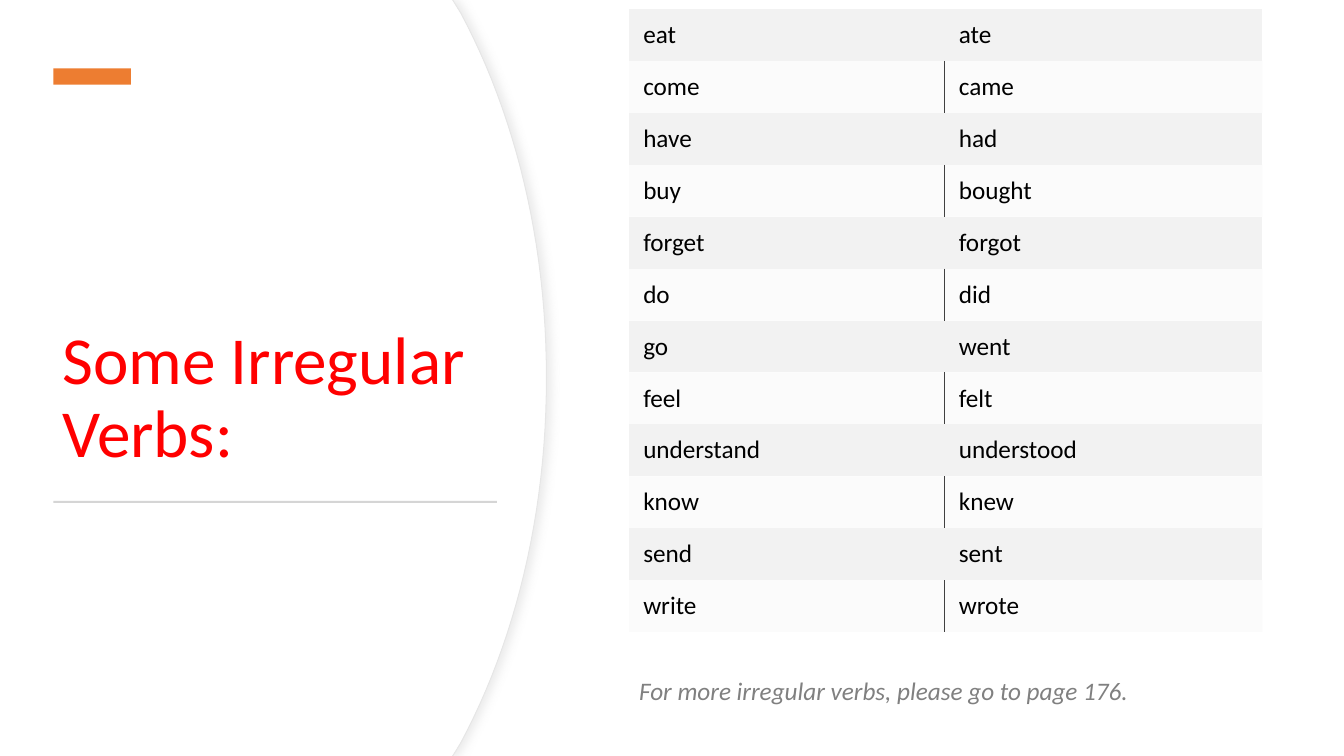
from pptx import Presentation as Deck
from pptx.dml.color import RGBColor as Rgb
from pptx.enum.shapes import MSO_SHAPE as Kind
from pptx.enum.text import MSO_ANCHOR as Anchor
from pptx.oxml import parse_xml as to_xml
from pptx.oxml.ns import nsdecls, qn
from pptx.util import Inches, Pt


def paint(fmt, color):
    fmt.solid()
    fmt.fore_color.rgb = Rgb.from_string(color)


def write(frame, text, color, look):
    para = frame.paragraphs[0]
    run = para.add_run()
    run.text = text
    run.font.name = "Calibri"
    paint(run.font.fill, color)
    for key, val in look.items():
        setattr(run.font, key, val)
    return para


deck = Deck()
deck.slide_width = Inches(13.33)
deck.slide_height = Inches(7.5)
slide = deck.slides.add_slide(deck.slide_layouts[6])
shapes = slide.shapes

steps = 24
for edge in (5.42, 5.41):
    curve = [(edge - 0.85, 0.13), (edge - 0.31, 1.14), (edge, 2.39), (edge, 3.75)]
    upper = []
    for step in range(steps + 1):
        t = step / steps
        mix = ((1 - t) ** 3, 3 * t * (1 - t) ** 2, 3 * t ** 2 * (1 - t), t ** 3)
        upper.append([sum(m * p[axis] for m, p in zip(mix, curve)) for axis in (0, 1)])
    upper.insert(0, [edge - 0.93, 0])
    lower = [[x, 7.5 - y] for x, y in reversed(upper[:-1])]
    path = [(Inches(x), Inches(y)) for x, y in upper + lower + [[0, 7.5]]]
    form = shapes.build_freeform(0, 0)
    form.add_line_segments(path, close=True)
    panel = form.convert_to_shape()
    panel.shadow.inherit = False
    paint(panel.fill, "FFFFFF")
    if edge == 5.42:
        paint(panel.line.fill, "E6E6E6")
        panel.line.width = Pt(0.75)
        glow = panel._element.spPr.find(qn("a:effectLst"))
        glow.append(to_xml(
            f'<a:outerShdw {nsdecls("a")} blurRad="{Pt(6)}" dist="{Pt(3)}" dir="0" '
            'algn="l" rotWithShape="0"><a:srgbClr val="D9D9D9">'
            '<a:alpha val="50000"/></a:srgbClr></a:outerShdw>'))
    else:
        panel.line.fill.background()

title = shapes.add_textbox(Inches(0.52), Inches(1.23), Inches(4.4), Inches(3.5))
frame = title.text_frame
frame.word_wrap = True
frame.vertical_anchor = Anchor.BOTTOM
para = write(frame, "Some Irregular Verbs:", "FF0000", {"size": Pt(48)})
para.line_spacing = 0.9

for box, color in (
    ((0.53, 0.68, 0.77, 0.16), "ED7D31"),
    ((0.53, 4.97, 4.4, 0.02), "D5D5D5"),
):
    bar = shapes.add_shape(Kind.RECTANGLE, *map(Inches, box))
    bar.shadow.inherit = False
    paint(bar.fill, color)
    bar.line.fill.background()

verbs = [
    ("eat", "ate"),
    ("come", "came"),
    ("have", "had"),
    ("buy", "bought"),
    ("forget", "forgot"),
    ("do", "did"),
    ("go", "went"),
    ("feel", "felt"),
    ("understand", "understood"),
    ("know", "knew"),
    ("send", "sent"),
    ("write", "wrote"),
]
high = Inches(6.18)
grid = shapes.add_table(len(verbs), 2, Inches(6.24), Inches(0.09), Inches(6.28), high)
table = grid.table
table.first_row = table.horz_banding = False
style = table._tbl.tblPr.find(qn("a:tableStyleId"))
style.text = "{2D5ABB26-0587-4C30-8999-92F81FD0307C}"
for col, wide in zip(table.columns, (3.13, 3.15)):
    col.width = Inches(wide)

inset = {
    "margin_left": Inches(0.14),
    "margin_right": Inches(0.07),
    "margin_top": Inches(0.1),
    "margin_bottom": Inches(0.1),
    "vertical_anchor": Anchor.MIDDLE,
}
for row, pair in enumerate(verbs):
    table.rows[row].height = high // len(verbs)
    for col, verb in enumerate(pair):
        cell = table.cell(row, col)
        for key, val in inset.items():
            setattr(cell, key, val)
        write(cell.text_frame, verb, "000000", {"size": Pt(18)})
        paint(cell.fill, "F2F2F2")
        if row % 2:
            props = cell._tc.tcPr
            tint = props.find(".//" + qn("a:srgbClr"))
            tint.append(to_xml(f'<a:alpha {nsdecls("a")} val="30000"/>'))
            side = "lnL" if col else "lnR"
            props.insert(0, to_xml(
                f'<a:{side} {nsdecls("a")} w="{Pt(0.5)}"><a:solidFill>'
                f'<a:srgbClr val="404040"/></a:solidFill></a:{side}>'))

note = shapes.add_textbox(Inches(6.24), Inches(6.65), Inches(5.11), Inches(0.4))
note.text_frame.word_wrap = False
write(note.text_frame, "For more irregular verbs, please go to page 176.", "808080",
      {"size": Pt(18), "italic": True})

deck.save("out.pptx")
